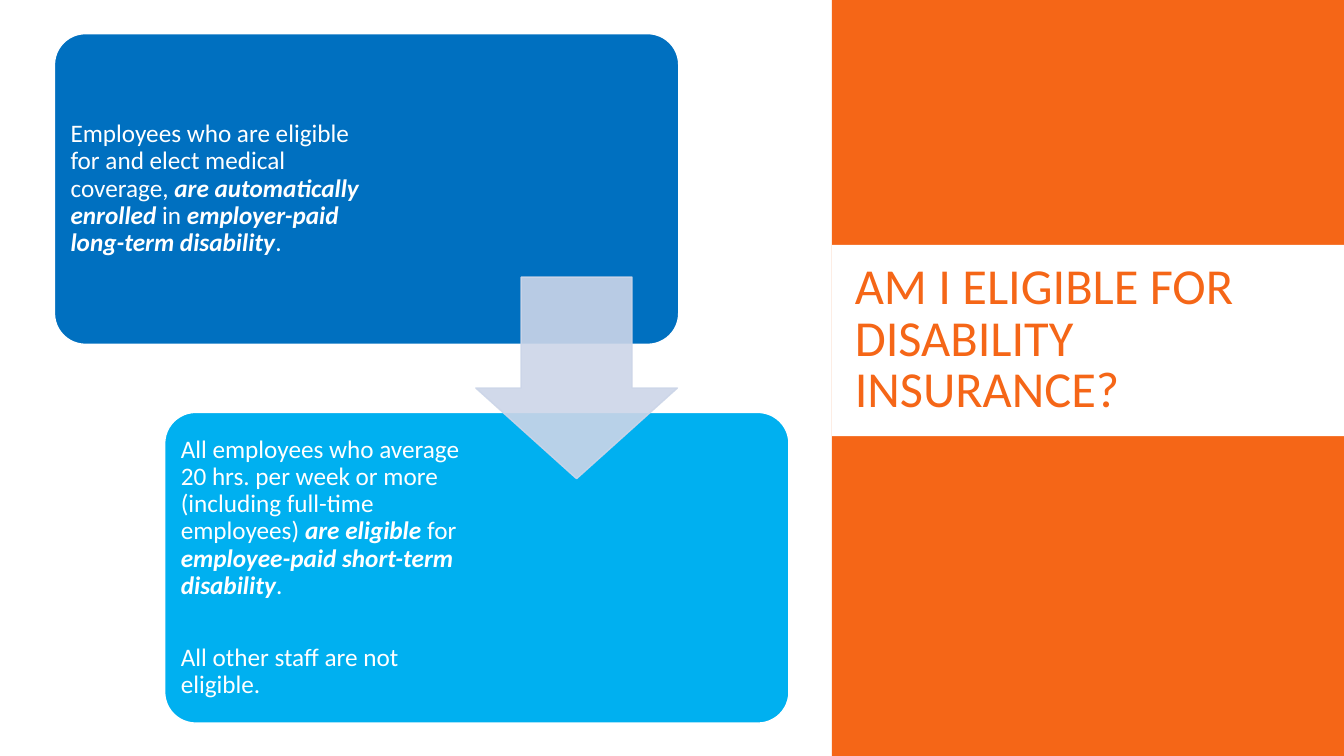
from lxml import etree
from pptx import Presentation
from pptx.dml.color import RGBColor
from pptx.enum.shapes import MSO_SHAPE
from pptx.enum.text import MSO_ANCHOR, MSO_AUTO_SIZE, PP_ALIGN
from pptx.oxml.ns import qn
from pptx.util import Inches, Pt

RECT, ROUND, DOWN = MSO_SHAPE.RECTANGLE, MSO_SHAPE.ROUNDED_RECTANGLE, MSO_SHAPE.DOWN_ARROW
MIDDLE, LEFT, NO_FIT = MSO_ANCHOR.MIDDLE, PP_ALIGN.LEFT, MSO_AUTO_SIZE.NONE
HUES = {"orange": "F56617", "white": "FFFFFF", "blue": "0070C0", "sky": "00B0F0", "mist": "CCD5E8"}
FONT = "Calibri"
TITLE_ONLY = 5


class Deck:
    """Style and current slide; lengths are on a grid of 100 columns by 100 rows."""

    def __init__(self):
        self.prs = Presentation()
        self.prs.slide_width, self.prs.slide_height = Inches(13.33), Inches(7.5)
        self.slide = self.prs.slides.add_slide(self.prs.slide_layouts[TITLE_ONLY])

    def grid(self, x, y, w, h):
        col, row = self.prs.slide_width / 100, self.prs.slide_height / 100
        return int(x * col), int(y * row), int(w * col), int(h * row)

    def shape(self, kind, box, fill, line=None, adjust=(), alpha=None):
        item = self.slide.shapes.add_shape(kind, *self.grid(*box))
        item.shadow.inherit = False
        for i, value in enumerate(adjust):
            item.adjustments[i] = value
        item.fill.solid()
        item.fill.fore_color.rgb = RGBColor.from_string(HUES[fill])
        if line:
            item.line.color.rgb = RGBColor.from_string(HUES[line])
            item.line.width = Pt(1)
        else:
            item.line.fill.background()
        if alpha:
            for hue in item._element.spPr.iter(qn("a:srgbClr")):
                etree.SubElement(hue, qn("a:alpha")).set("val", str(alpha * 1000))

    def add_runs(self, frame, paras, size, hue, space, gap=0):
        frame.word_wrap, frame.auto_size = True, NO_FIT
        frame.vertical_anchor = MIDDLE
        for i, runs in enumerate(paras):
            para = frame.paragraphs[0] if i == 0 else frame.add_paragraph()
            para.alignment, para.line_spacing = LEFT, space
            para.space_before = Pt(0)
            para.space_after = Pt(gap if i < len(paras) - 1 else 0)
            for text, strong in runs:
                run = para.add_run()
                run.text = text
                font = run.font
                font.name, font.size = FONT, Pt(size)
                font.bold = font.italic = strong
                font.color.rgb = RGBColor.from_string(HUES[hue])

    def title(self, box, text):
        item = self.slide.shapes.title
        item.left, item.top, item.width, item.height = self.grid(*box)
        self.slide.shapes._spTree.append(item._element)  # in front of the panel
        self.add_runs(item.text_frame, [[(text, False)]], 36, "orange", 0.85)

    def text(self, box, paras):
        frame = self.slide.shapes.add_textbox(*self.grid(*box)).text_frame
        frame.margin_left = frame.margin_right = Inches(0.07)
        frame.margin_top = frame.margin_bottom = Inches(0.07)
        self.add_runs(frame, paras, 18, "white", 0.9, gap=32)

    def card(self, x, y, wide, fill, paras):
        self.shape(ROUND, (x, y, 46.45, 41.1), fill, "white", [0.1])
        self.text((x + 0.68, y + 1.2, wide, 38.7), paras)


CARDS = [
    ("blue", 22.6, [[
        ("Employees who are eligible for and elect medical coverage, ", False),
        ("are automatically enrolled ", True), ("in ", False),
        ("employer-paid long-term disability", True), (".", False)]]),
    ("sky", 21.85, [[
        ("All employees who average 20 hrs. per week or more "
         "(including full-time employees) ", False),
        ("are eligible ", True), ("for ", False),
        ("employee-paid short-term disability", True), (".", False)],
        [("All other staff are not eligible.", False)]]),
]


def main():
    deck = Deck()

    # Title panel on the right
    deck.shape(RECT, (61.9, 0, 38.1, 100), "orange")
    deck.shape(RECT, (61.9, 32.4, 38.1, 25.3), "white")
    deck.title((62.85, 34.1, 33.9, 22), "AM I ELIGIBLE FOR DISABILITY INSURANCE?")

    # Two cards, stepping down to the right
    for i, (fill, wide, paras) in enumerate(CARDS):
        deck.card(4.05 + 8.2 * i, 4.45 + 50.1 * i, wide, fill, paras)

    # Arrow from the first card to the second
    deck.shape(DOWN, (35.4, 36.65, 15, 26.67), "mist", "mist", [0.55, 0.45], alpha=90)

    deck.prs.save("out.pptx")


if __name__ == "__main__":
    main()
